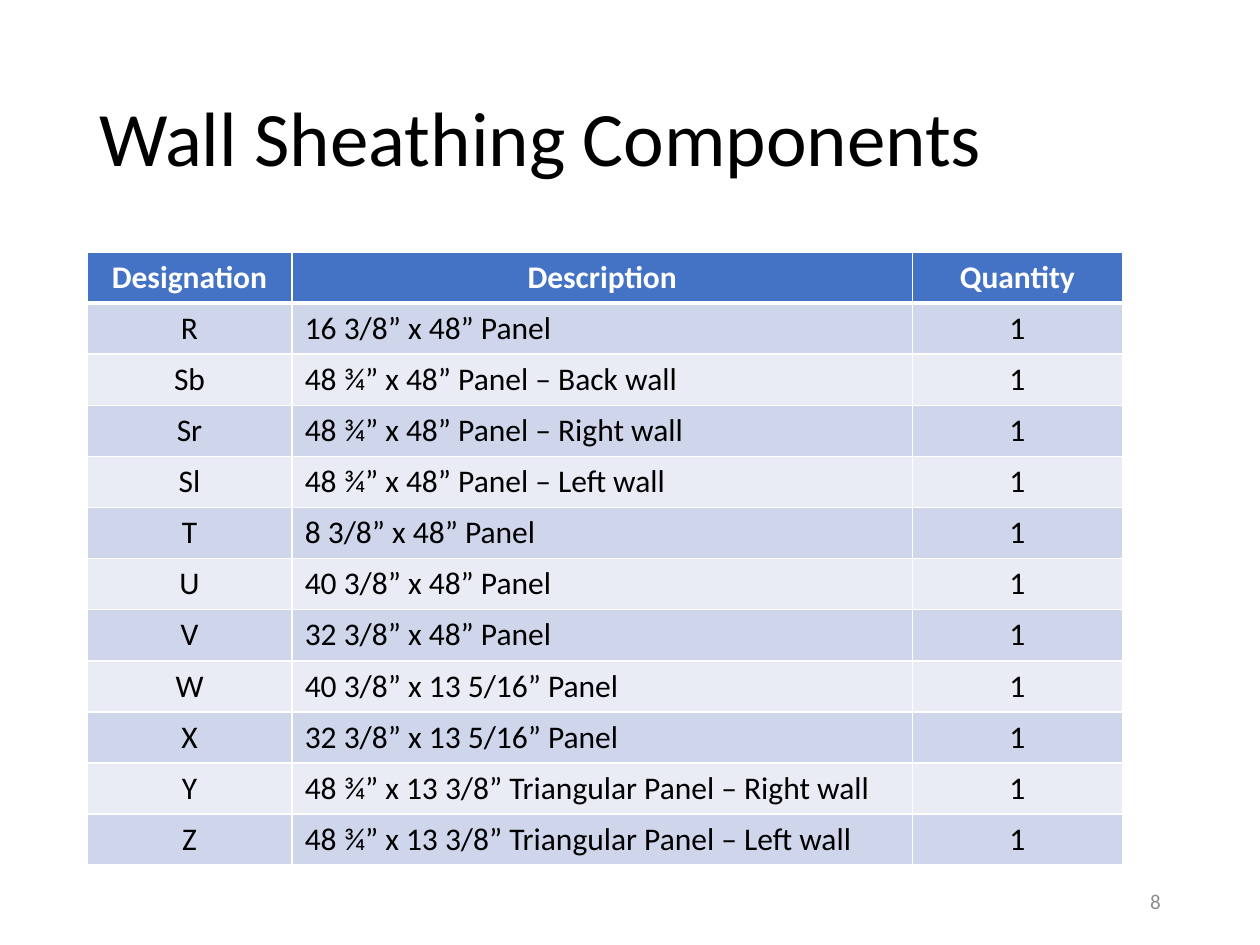
from dataclasses import dataclass

from lxml.etree import SubElement
from pptx import Presentation
from pptx.dml.color import RGBColor
from pptx.enum.text import MSO_ANCHOR, PP_ALIGN
from pptx.oxml.ns import qn
from pptx.util import Cm, Pt


@dataclass(frozen=True)
class Theme:
    font: str = "Calibri"
    ink: str = "000000"
    white: str = "FFFFFF"
    muted: str = "8C8C8C"
    header: str = "4472C4"
    bands: tuple = ("E9EBF5", "CFD5EA")
    title_size: int = 44
    table_size: int = 18
    number_size: int = 12
    thin_line: int = 1
    thick_line: int = 3


theme = Theme()


def write_text(frame, text, size, color=theme.ink, bold=False, align=PP_ALIGN.LEFT, line_spacing=1.0):
    frame.word_wrap = True
    paragraph = frame.paragraphs[0]
    paragraph.alignment = align
    paragraph.line_spacing = line_spacing
    run = paragraph.add_run()
    run.text = text
    run.font.name = theme.font
    run.font.size = Pt(size)
    run.font.bold = bold
    run.font.color.rgb = RGBColor.from_string(color)


def add_border(cell, side, width):
    properties = cell._tc.get_or_add_tcPr()
    line = SubElement(properties, qn(f"a:ln{side}"), w=str(Pt(width)))
    fill = SubElement(line, qn("a:solidFill"))
    SubElement(fill, qn("a:srgbClr"), val=theme.white)


presentation = Presentation()
presentation.slide_width = Cm(25.4)
presentation.slide_height = Cm(19.05)
slide = presentation.slides.add_slide(presentation.slide_layouts[6])

title = slide.shapes.add_textbox(Cm(1.75), Cm(1.01), Cm(21.9), Cm(3.68))
title.text_frame.vertical_anchor = MSO_ANCHOR.MIDDLE
write_text(title.text_frame, "Wall Sheathing Components", size=theme.title_size, line_spacing=0.9)

components = [
    ("R", "16 3/8” x 48” Panel"),
    ("Sb", "48 ¾” x 48” Panel – Back wall"),
    ("Sr", "48 ¾” x 48” Panel – Right wall"),
    ("Sl", "48 ¾” x 48” Panel – Left wall"),
    ("T", "8 3/8” x 48” Panel"),
    ("U", "40 3/8” x 48” Panel"),
    ("V", "32 3/8” x 48” Panel"),
    ("W", "40 3/8” x 13 5/16” Panel"),
    ("X", "32 3/8” x 13 5/16” Panel"),
    ("Y", "48 ¾” x 13 3/8” Triangular Panel – Right wall"),
    ("Z", "48 ¾” x 13 3/8” Triangular Panel – Left wall"),
]
rows = [("Designation", "Description", "Quantity")]
rows += [(designation, description, "1") for designation, description in components]
column_widths = [4.14, 12.5, 4.24]
row_height = 1.03

table = slide.shapes.add_table(
    len(rows), len(column_widths), Cm(1.75), Cm(5.08), Cm(sum(column_widths)), Cm(row_height * len(rows))
).table
for column, width in zip(table.columns, column_widths):
    column.width = Cm(width)

for row_index, values in enumerate(rows):
    table.rows[row_index].height = Cm(row_height)
    is_header = row_index == 0
    for column_index, value in enumerate(values):
        cell = table.cell(row_index, column_index)
        add_border(cell, "L", theme.thin_line)
        add_border(cell, "R", theme.thin_line)
        add_border(cell, "T", theme.thick_line if row_index == 1 else theme.thin_line)
        add_border(cell, "B", theme.thick_line if is_header else theme.thin_line)
        cell.fill.solid()
        cell.fill.fore_color.rgb = RGBColor.from_string(theme.header if is_header else theme.bands[row_index % 2])
        write_text(
            cell.text_frame,
            value,
            size=theme.table_size,
            color=theme.white if is_header else theme.ink,
            bold=is_header,
            align=PP_ALIGN.CENTER if is_header or column_index != 1 else PP_ALIGN.LEFT,
        )

slide_number = slide.shapes.add_textbox(Cm(17.94), Cm(17.66), Cm(5.71), Cm(1.01))
slide_number.text_frame.vertical_anchor = MSO_ANCHOR.MIDDLE
write_text(slide_number.text_frame, "8", size=theme.number_size, color=theme.muted, align=PP_ALIGN.RIGHT)

presentation.save("out.pptx")
